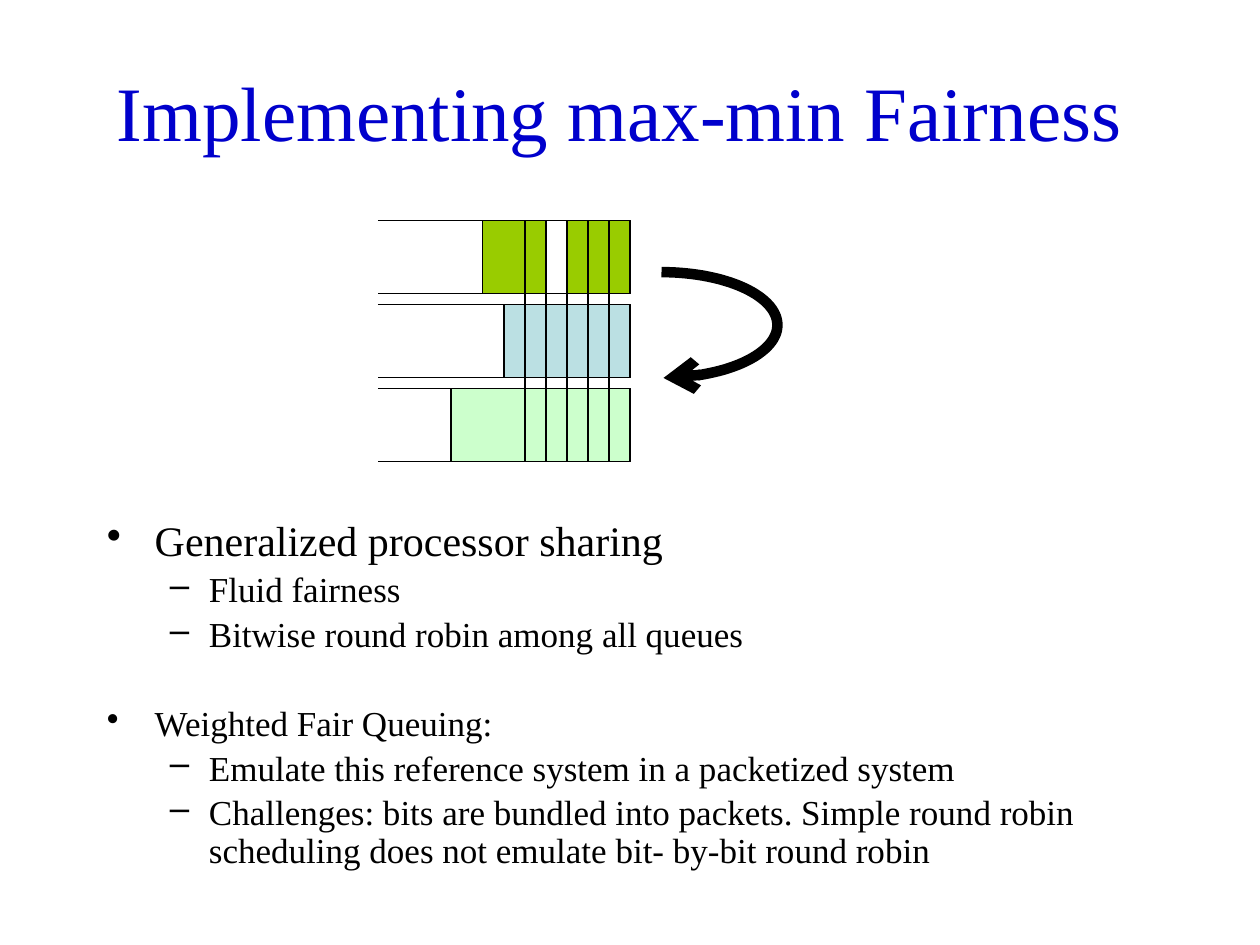
import math
from lxml import etree
from pptx import Presentation
from pptx import util as u
from pptx.dml.color import RGBColor
from pptx.enum import shapes, text
from pptx.oxml import ns

HUES = {"ink": "000000", "title": "0000CC", "lime": "99CC00",
        "blue": "BBE0E3", "mint": "CCFFCC"}
FONT = "Times New Roman"


class Deck:
    """Hold the style and the current slide, and draw each kind of element."""

    def __init__(self):
        self.prs = Presentation()
        self.prs.slide_width, self.prs.slide_height = u.Inches(10), u.Inches(7.5)
        self.slide = self.prs.slides.add_slide(self.prs.slide_layouts[6])
        self.items = self.slide.shapes

    def hue(self, name):
        return RGBColor.from_string(HUES[name])

    def put(self, target, values):
        for name, value in values.items():
            setattr(target, name, value)

    def pen(self, item, width=0.75):
        item.line.color.rgb = self.hue("ink")
        item.line.width = u.Pt(width)

    def rect(self, left, top, width, height, fill):
        box = self.items.add_shape(shapes.MSO_SHAPE.RECTANGLE,
                                   *map(u.Inches, (left, top, width, height)))
        box.shadow.inherit = False
        box.fill.solid()
        box.fill.fore_color.rgb = self.hue(fill)
        self.pen(box)

    def trace(self, points, width=0.75):
        first, *rest = [(u.Inches(x), u.Inches(y)) for x, y in points]
        form = self.items.build_freeform(*first)
        form.add_line_segments(rest, close=False)
        item = form.convert_to_shape()
        item.shadow.inherit = False
        item.fill.background()
        self.pen(item, width)
        return item

    def arrow(self, points, width):
        props = self.trace(points, width)._element.spPr
        edge = props.find(ns.qn("a:ln"))
        etree.SubElement(edge, ns.qn("a:tailEnd"), type="arrow")

    def rule(self, x, top, end):
        line = self.items.add_connector(shapes.MSO_CONNECTOR.STRAIGHT,
                                        *map(u.Inches, (x, top, x, end)))
        self.pen(line)
        etree.SubElement(line._element.spPr, ns.qn("a:effectLst"))

    def frame(self, left, top, width, height, anchor):
        box = self.items.add_textbox(*map(u.Inches, (left, top, width, height)))
        self.put(box.text_frame, {"word_wrap": True, "vertical_anchor": anchor})
        return box.text_frame

    def say(self, para, words, size, color, **values):
        run = para.add_run()
        run.text = words
        self.put(run.font, {"name": FONT, "size": u.Pt(size)})
        run.font.color.rgb = self.hue(color)
        self.put(para, values)

    def title(self, words):
        body = self.frame(0.67, 0.25, 8.5, 1.25, text.MSO_ANCHOR.MIDDLE)
        self.say(body.paragraphs[0], words, 44, "title",
                 alignment=text.PP_ALIGN.CENTER)

    def bullet(self, para, mark, left, hang):
        props = para._p.get_or_add_pPr()
        props.set("marL", str(u.Inches(left)))
        props.set("indent", str(-u.Inches(hang)))
        etree.SubElement(props, ns.qn("a:buChar"), char=mark)

    def points(self, rows):
        body = self.frame(0.75, 4.08, 8.5, 3.42, text.MSO_ANCHOR.TOP)
        marks = [("•", 0.38, 0.38), ("–", 0.81, 0.31)]
        for i, (level, size, gap, words) in enumerate(rows):
            para = body.add_paragraph() if i else body.paragraphs[0]
            self.say(para, words, size, "ink", level=level,
                     line_spacing=0.9, space_before=u.Pt(gap))
            self.bullet(para, *marks[level])


def main():
    deck = Deck()
    deck.title("Implementing max-min Fairness")
    left, right, top, high, step = 3, 5, 1.75, 0.58, 2 / 3
    queues = [[(3.83, 0.5, "lime"), (4.5, 0.5, "lime")],
              [(4, 1, "blue")], [(3.58, 1.42, "mint")]]
    for row, parts in enumerate(queues):
        y = top + row * step
        for x, wide, fill in parts:
            deck.rect(x, y, wide, high, fill)
        deck.trace([(left, y), (right, y), (right, y + high), (left, y + high)])
    for n in range(1, 6):
        deck.rule(right - n / 6, top, 3.67)

    turn = [math.radians(a) for a in range(-90, 90, 3)] + [math.radians(89)]
    deck.arrow([(5.25 + 0.92 * math.cos(a), 2.58 + 0.42 * math.sin(a))
                for a in turn], 6)

    deck.points([
        (0, 24, 4.8, "Generalized processor sharing"),
        (1, 20, 4, "Fluid fairness"),
        (1, 20, 4, "Bitwise round robin among all queues"),
        (0, 20, 29, "Weighted Fair Queuing:"),
        (1, 20, 4, "Emulate this reference system in a packetized system"),
        (1, 20, 4, "Challenges: bits are bundled into packets. Simple round robin "
                   "scheduling does not emulate bit- by-bit round robin"),
    ])
    deck.prs.save("out.pptx")


if __name__ == "__main__":
    main()
